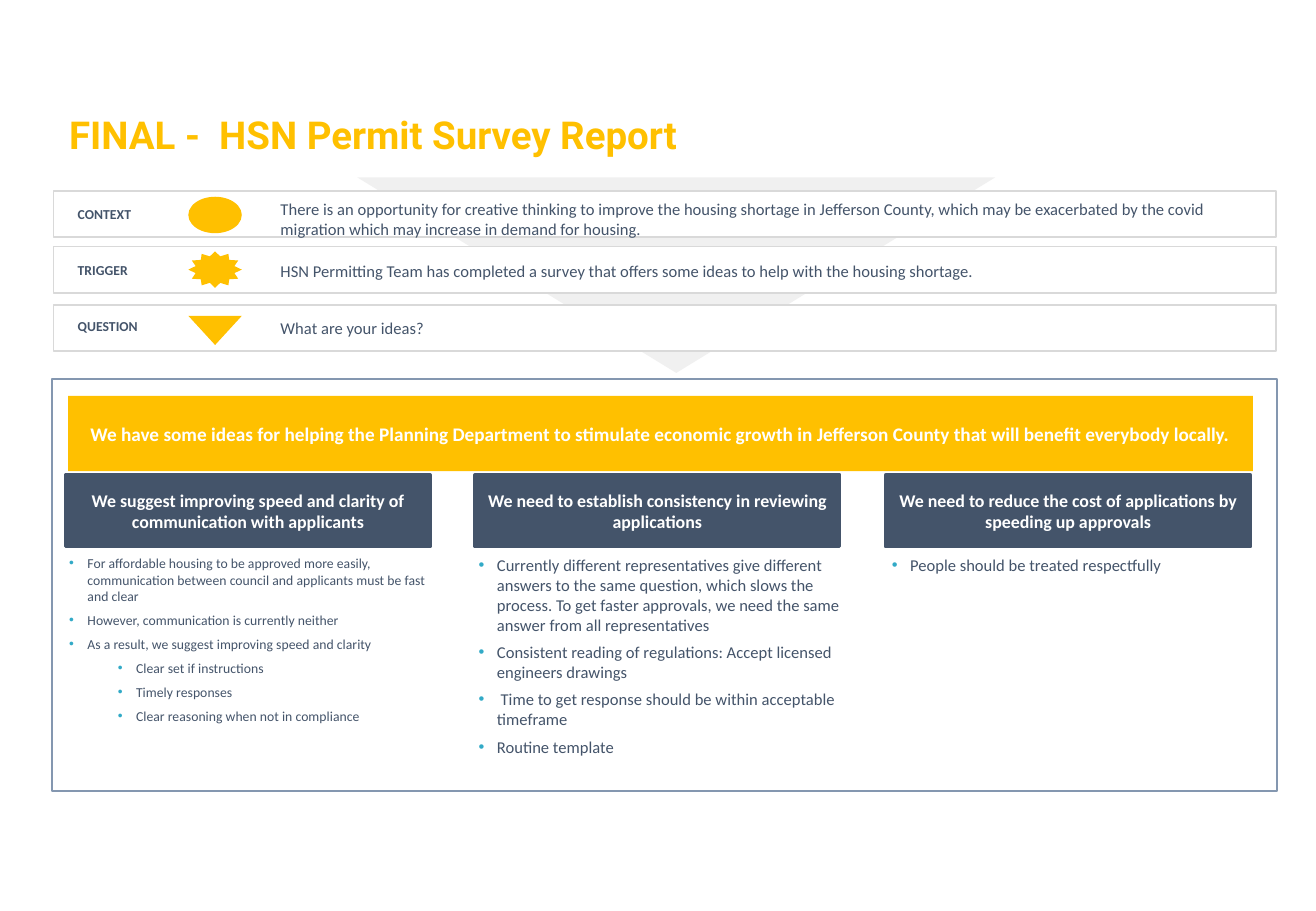
"""Build the permit survey report slide."""
from dataclasses import dataclass
from typing import NamedTuple, Optional

from lxml.etree import SubElement
from pptx import Presentation
from pptx.dml.color import RGBColor as Rgb
from pptx.enum.shapes import MSO_SHAPE as Preset
from pptx.enum.text import MSO_ANCHOR as Anchor, PP_ALIGN as Align
from pptx.oxml.ns import qn
from pptx.shapes.autoshape import Shape
from pptx.slide import Slide
from pptx.util import Emu, Pt

PX = 9144
COLORS = {
    "gold": "FFC000", "slate": "44546A", "white": "FFFFFF",
    "silver": "D9D9D9", "frame": "8497B0", "bullet": "32AAC7",
}
BULLET_INDENT = 15
SUB_BULLET_MARGIN = 55


class Box(NamedTuple):
    left: int
    top: int
    width: int
    height: int


class Style(NamedTuple):
    size: float
    color: str
    bold: bool = False
    font: str = "Calibri"
    align: Align = Align.LEFT


class Bullet(NamedTuple):
    text: str
    level: int = 0


@dataclass(frozen=True)
class Row:
    label: str
    message: str
    top: int
    label_top: int
    message_top: int
    message_height: int
    icon: Preset
    icon_top: int
    icon_height: int
    icon_turn: int = 0


@dataclass(frozen=True)
class Column:
    heading: str
    body: Box
    size: float
    bullets: tuple[Bullet, ...]


TITLE = Style(22.8, "gold", True, "Roboto")
LABEL = Style(8.1, "slate", True)
MESSAGE = Style(9.8, "slate")
BANNER = Style(11.4, "white", True, align=Align.CENTER)
HEADING = Style(10.6, "white", True, align=Align.CENTER)

ROWS = (
    Row("CONTEXT",
        "There is an opportunity for creative thinking to improve the housing shortage in "
        "Jefferson County, which may be exacerbated by the covid migration which may "
        "increase in demand for housing.",
        157, 162, 156, 49, Preset.OVAL, 162, 30),
    Row("TRIGGER",
        "HSN Permitting Team has completed a survey that offers some ideas to help with "
        "the housing shortage.",
        203, 208, 209, 28, Preset.STAR_12_POINT, 207, 30),
    Row("QUESTION", "What are your ideas?",
        251, 254, 256, 28, Preset.ISOSCELES_TRIANGLE, 260, 24, 180),
)

COLUMNS = (
    Column("We suggest improving speed and clarity of communication with applicants",
           Box(54, 453, 317, 187), 8.1, (
               Bullet("For affordable housing to be approved more easily, communication "
                      "between council and applicants must be fast and clear"),
               Bullet("However, communication is currently neither"),
               Bullet("As a result, we suggest improving speed and clarity"),
               Bullet("Clear set if instructions", 1),
               Bullet("Timely responses", 1),
               Bullet("Clear reasoning when not in compliance", 1))),
    Column("We need to establish consistency in reviewing applications",
           Box(391, 453, 304, 152), 9.8, (
               Bullet("Currently different representatives give different answers to the "
                      "same question, which slows the process. To get faster approvals, we "
                      "need the same answer from all representatives"),
               Bullet("Consistent reading of regulations: Accept licensed engineers drawings"),
               Bullet(" Time to get response should be within acceptable timeframe"),
               Bullet("Routine template"))),
    Column("We need to reduce the cost of applications by speeding up approvals",
           Box(731, 453, 304, 152), 9.8,
           (Bullet("People should be treated respectfully"),)),
)


def emu(box: Box) -> list[Emu]:
    return [Emu(length * PX) for length in box]


def rgb(name: str) -> Rgb:
    return Rgb.from_string(COLORS[name])


def write(shape: Shape, texts: list[str], style: Style, **frame_format) -> None:
    frame = shape.text_frame
    frame_values = {"word_wrap": True, "vertical_anchor": Anchor.MIDDLE, **frame_format}
    font_values = {"size": Pt(style.size), "bold": style.bold, "name": style.font}
    for name, value in frame_values.items():
        setattr(frame, name, value)
    for index, text in enumerate(texts):
        paragraph = frame.add_paragraph() if index else frame.paragraphs[0]
        paragraph.alignment = style.align
        run = paragraph.add_run()
        run.text = text
        for name, value in font_values.items():
            setattr(run.font, name, value)
        run.font.color.rgb = rgb(style.color)


def add_text(slide: Slide, box: Box, texts: list[str], style: Style, **frame_format) -> Shape:
    shape = slide.shapes.add_textbox(*emu(box))
    write(shape, texts, style, **frame_format)
    return shape


def add_block(slide: Slide, preset: Preset, box: Box, fill: Optional[str] = None,
              line: Optional[str] = None, line_width: float = 1, turn: int = 0) -> Shape:
    shape = slide.shapes.add_shape(preset, *emu(box))
    shape.shadow.inherit = False
    shape.rotation = turn
    if fill:
        shape.fill.solid()
        shape.fill.fore_color.rgb = rgb(fill)
    else:
        shape.fill.background()
    if line:
        shape.line.color.rgb = rgb(line)
        shape.line.width = Pt(line_width)
    else:
        shape.line.fill.background()
    return shape


def add_funnel(slide: Slide) -> None:
    funnel = add_block(slide, Preset.ISOSCELES_TRIANGLE, Box(294, 146, 525, 161),
                       "silver", turn=180)
    color = next(funnel.fill._xPr.iter(qn("a:srgbClr")))
    SubElement(color, qn("a:alpha"), val="39000")


def add_row(slide: Slide, row: Row) -> None:
    add_text(slide, Box(54, row.label_top, 129, 29), [row.label], LABEL)
    add_text(slide, Box(221, row.message_top, 829, row.message_height), [row.message], MESSAGE)
    add_block(slide, row.icon, Box(155, row.icon_top, 44, row.icon_height), "gold",
              turn=row.icon_turn)


def add_column(slide: Slide, index: int, column: Column) -> None:
    side, edge = Emu(3 * PX), Emu(4 * PX)
    body = add_text(slide, column.body, [bullet.text for bullet in column.bullets],
                    Style(column.size, "slate"), vertical_anchor=Anchor.TOP,
                    margin_left=side, margin_right=side, margin_top=edge, margin_bottom=edge)
    for bullet, paragraph in zip(column.bullets, body.text_frame.paragraphs):
        paragraph.level = bullet.level
        paragraph.space_after = Pt(4.5)
        properties = paragraph._p.get_or_add_pPr()
        margin = SUB_BULLET_MARGIN if bullet.level else BULLET_INDENT
        properties.set("marL", str(margin * PX))
        properties.set("indent", str(-BULLET_INDENT * PX))
        bullet_color = SubElement(properties, qn("a:buClr"))
        SubElement(bullet_color, qn("a:srgbClr"), val=COLORS["bullet"])
        SubElement(properties, qn("a:buFont"), typeface="Arial")
        SubElement(properties, qn("a:buChar"), char="•")
    heading = add_block(slide, Preset.RECTANGLE, Box(54 + 675 * index // 2, 391, 300, 59),
                        "slate", "slate", 2.25)
    write(heading, [column.heading], HEADING)


def main() -> None:
    deck = Presentation()
    deck.slide_width, deck.slide_height = Emu(1083 * PX), Emu(750 * PX)
    slide = deck.slides.add_slide(deck.slide_layouts[6])
    title = add_text(slide, Box(47, 72, 935, 82), ["FINAL -  HSN Permit Survey Report"], TITLE)
    title.text_frame.paragraphs[0].line_spacing = 0.9
    add_funnel(slide)
    for row in ROWS:
        add_block(slide, Preset.RECTANGLE, Box(44, row.top, 1006, 38), "white", "silver")
    for row in ROWS:
        add_row(slide, row)
    banner = add_block(slide, Preset.RECTANGLE, Box(56, 326, 975, 62), "gold")
    write(banner, ["We have some ideas for helping the Planning Department to stimulate economic "
                   "growth in Jefferson County that will benefit everybody locally."], BANNER)
    for index, column in enumerate(COLUMNS):
        add_column(slide, index, column)
    add_block(slide, Preset.RECTANGLE, Box(43, 312, 1008, 339), line="frame")
    deck.save("out.pptx")


if __name__ == "__main__":
    main()
